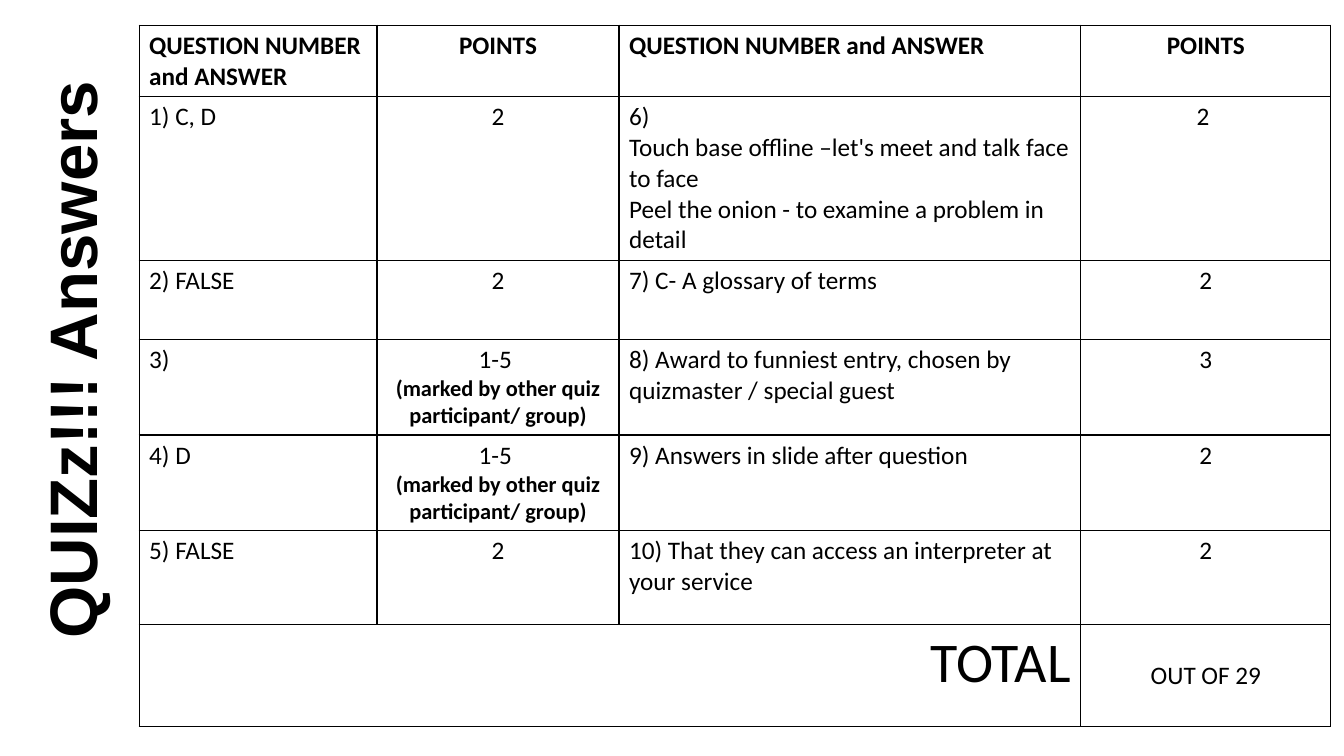
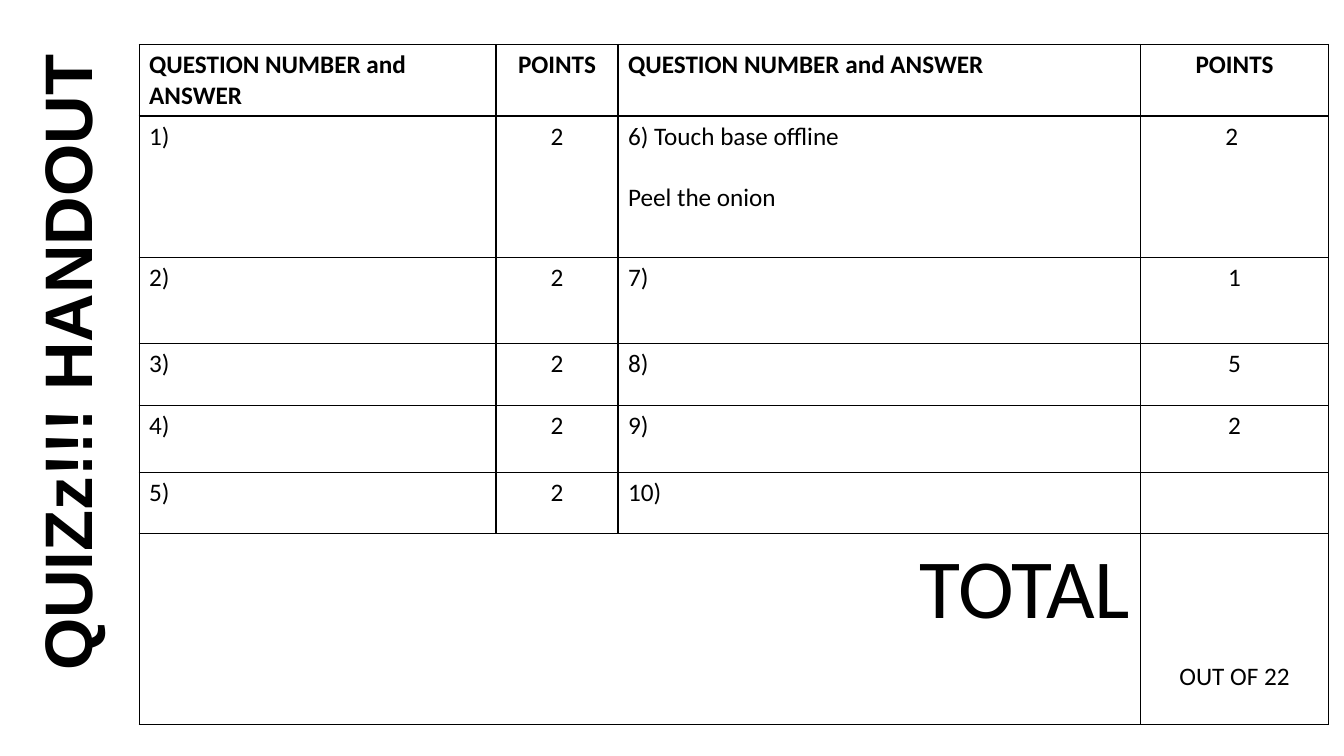
from dataclasses import dataclass
from typing import Union

from lxml.etree import SubElement
from pptx import Presentation
from pptx.dml.color import RGBColor
from pptx.enum.text import MSO_ANCHOR as Anchor, MSO_AUTO_SIZE as AutoSize, PP_ALIGN as Align
from pptx.oxml.ns import qn
from pptx.util import Inches, Pt

BLACK = RGBColor(0x00, 0x00, 0x00)
TITLE_FONT = {"name": "Arial", "size": Pt(48), "bold": True}
TITLE_FRAME = {"word_wrap": True, "auto_size": AutoSize.NONE, "vertical_anchor": Anchor.TOP}
TITLE_SIZE = (7.77, 1.72)
TABLE_LEFT = 1.38
CELL_FONT = "Calibri"
BODY_SIZE = 18
LINE_HEIGHT = 0.305
CELL_MARGIN = 0.05
COLUMN_ALIGNS = (Align.LEFT, Align.CENTER, Align.LEFT, Align.CENTER)
HEADINGS = ("QUESTION NUMBER and ANSWER", "POINTS") * 2


@dataclass(frozen=True)
class Line:
    text: str
    size: int = BODY_SIZE
    bold: bool = False
    space_before: int = 0


CellText = Union[str, tuple[Line, ...]]


@dataclass(frozen=True)
class ScoreSheet:
    title: str
    title_left: float
    title_top: float
    table_top: float
    columns: tuple[float, ...]
    rows: tuple[float, ...]
    answers: tuple[tuple[CellText, ...], ...]
    total_size: int
    maximum: str
    maximum_line: int  # text lines left free above the maximum


PEER_MARKED = (Line("1-5 "), Line("(marked by other quiz participant/ group)", 16, True))

SHEETS = (
    ScoreSheet(
        title="QUIZz!!! Answers", title_left=-2.77, title_top=1.69, table_top=0.25,
        columns=(2.36, 2.4, 4.58, 2.48),
        rows=(0.7, 1.6, 0.78, 0.93, 0.93, 0.93, 1.01),
        answers=(
            ("1) C, D", "2",
             (Line("6)"),
              Line("Touch base offline –let's meet and talk face to face"),
              Line("Peel the onion - to examine a problem in detail")), "2 "),
            ("2) FALSE", "2", "7) C- A glossary of terms", "2"),
            ("3)", PEER_MARKED,
             "8) Award to funniest entry, chosen by quizmaster / special guest", "3"),
            ("4) D", PEER_MARKED, "9) Answers in slide after question", "2"),
            ("5) FALSE", "2", "10) That they can access an interpreter at your service", "2"),
        ),
        total_size=40, maximum="OUT OF 29", maximum_line=1,
    ),
    ScoreSheet(
        title="QUIZz!!! HANDOUT", title_left=-2.82, title_top=2.01, table_top=0.44,
        columns=(3.54, 1.21, 5.18, 1.87),
        rows=(0.7, 1.4, 0.86, 0.61, 0.67, 0.6, 1.9),
        answers=(
            ("1)", "2",
             (Line("6) Touch base offline"), Line("Peel the onion", space_before=22)), "2 "),
            ("2)", "2", "7)", "1"),
            ("3)", "2", "8)", "5"),
            ("4)", "2", "9)", "2"),
            ("5)", "2", "10)", ""),
        ),
        total_size=60, maximum="OUT OF 22", maximum_line=4,
    ),
)


def apply_format(target, values: dict) -> None:
    for name, value in values.items():
        setattr(target, name, value)


def add_title(page, sheet: ScoreSheet) -> None:
    """Turn the title placeholder to read upwards along the left edge."""
    box = page.shapes.title
    width, height = TITLE_SIZE
    apply_format(box, {
        "left": Inches(sheet.title_left), "top": Inches(sheet.title_top),
        "width": Inches(width), "height": Inches(height), "rotation": 270,
    })
    apply_format(box.text_frame, TITLE_FRAME)
    para = box.text_frame.paragraphs[0]
    para.alignment = Align.LEFT
    span = para.add_run()
    span.text = sheet.title
    apply_format(span.font, TITLE_FONT)
    span.font.color.rgb = BLACK


def outline_cell(cell) -> None:
    """Give a cell black 1 pt borders and no fill."""
    properties = cell._tc.get_or_add_tcPr()
    for side in ("a:lnL", "a:lnR", "a:lnT", "a:lnB"):
        border = SubElement(properties, qn(side), w=str(Pt(1)))
        fill = SubElement(border, qn("a:solidFill"))
        SubElement(fill, qn("a:srgbClr"), val=str(BLACK))
    cell.fill.background()


def write_cell(cell, content: CellText, align: Align) -> None:
    lines = (Line(content),) if isinstance(content, str) else content
    frame = cell.text_frame
    for index, line in enumerate(lines):
        para = frame.add_paragraph() if index else frame.paragraphs[0]
        para.alignment = align
        if line.space_before:
            para.space_before = Pt(line.space_before)
        if line.text:
            span = para.add_run()
            span.text = line.text
            apply_format(span.font, {
                "name": CELL_FONT, "size": Pt(line.size), "bold": line.bold})
            span.font.color.rgb = BLACK


def add_score_table(page, sheet: ScoreSheet) -> None:
    table = page.shapes.add_table(
        len(sheet.rows), len(sheet.columns), Inches(TABLE_LEFT), Inches(sheet.table_top),
        Inches(sum(sheet.columns)), Inches(sum(sheet.rows))).table
    apply_format(table, {"first_row": False, "horz_banding": False})
    for column, width in zip(table.columns, sheet.columns):
        column.width = Inches(width)
    for row, height in zip(table.rows, sheet.rows):
        row.height = Inches(height)
    for cell in table.iter_cells():
        outline_cell(cell)

    headings = tuple((Line(text, bold=True),) for text in HEADINGS)
    for row_index, contents in enumerate((headings, *sheet.answers)):
        for column_index, content in enumerate(contents):
            write_cell(table.cell(row_index, column_index), content, COLUMN_ALIGNS[column_index])

    last = len(sheet.rows) - 1
    total = table.cell(last, 0)
    total.merge(table.cell(last, 2))
    write_cell(total, (Line("TOTAL", sheet.total_size),), Align.RIGHT)
    maximum = table.cell(last, 3)
    maximum.margin_top = Inches(CELL_MARGIN + sheet.maximum_line * LINE_HEIGHT)
    write_cell(maximum, sheet.maximum, Align.CENTER)


def main() -> None:
    deck = Presentation()
    deck.slide_width, deck.slide_height = Inches(13.33), Inches(7.5)
    title_only = deck.slide_layouts[5]
    for sheet in SHEETS:
        page = deck.slides.add_slide(title_only)
        add_title(page, sheet)
        add_score_table(page, sheet)
    deck.save("out.pptx")


if __name__ == "__main__":
    main()
